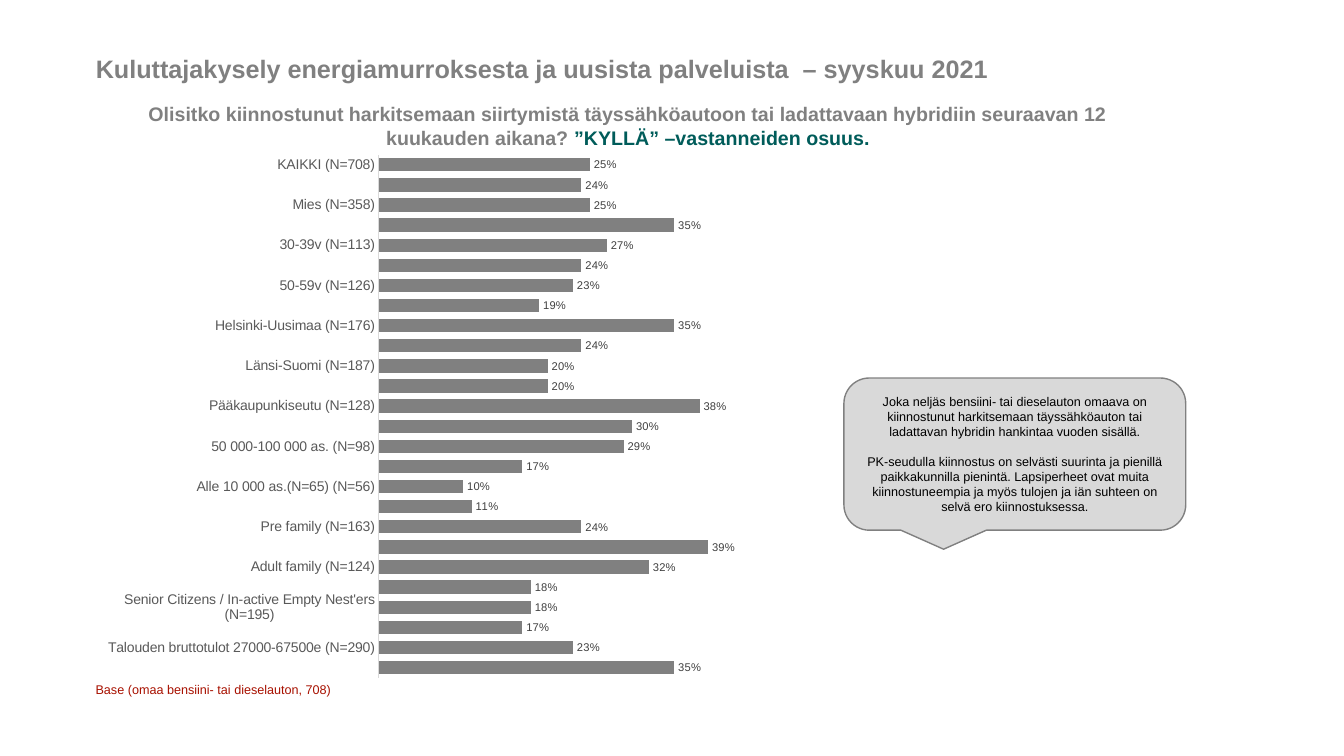
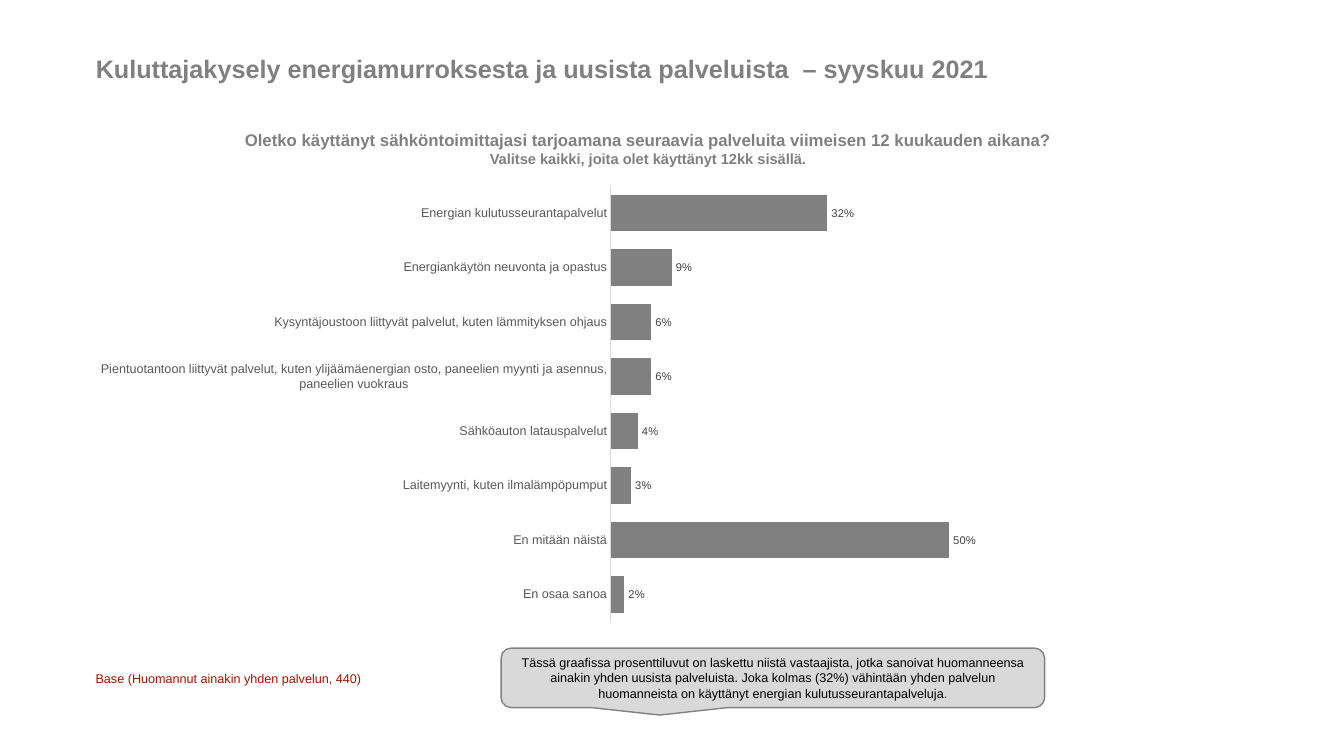
from dataclasses import dataclass

from lxml.etree import SubElement
from pptx import Presentation
from pptx.chart.data import CategoryChartData
from pptx.dml.color import RGBColor
from pptx.enum.chart import XL_CHART_TYPE, XL_LABEL_POSITION, XL_TICK_MARK
from pptx.enum.shapes import MSO_SHAPE
from pptx.enum.text import MSO_ANCHOR, MSO_AUTO_SIZE, PP_ALIGN
from pptx.oxml.ns import qn
from pptx.slide import Slide
from pptx.text.text import Font, TextFrame
from pptx.util import Inches, Pt

FONT = "Arial"
GRAY = "808080"
PALE = "D9D9D9"
TEAL = "005C5A"
RED = "A81100"
LABEL = "595959"
VALUE = "404040"
BLACK = "000000"
TITLE = "Kuluttajakysely energiamurroksesta ja uusista palveluista  – syyskuu 2021"


@dataclass(frozen=True)
class Box:
    left: float
    top: float
    width: float
    height: float

    def place(self) -> tuple[Inches, Inches, Inches, Inches]:
        return (Inches(self.left), Inches(self.top),
                Inches(self.width), Inches(self.height))


@dataclass(frozen=True)
class Run:
    text: str
    size: float
    color: str
    bold: bool = False


@dataclass(frozen=True)
class Note:
    """Text block: one tuple of runs for each paragraph."""
    box: Box
    paras: tuple[tuple[Run, ...], ...]
    align: PP_ALIGN = PP_ALIGN.CENTER
    anchor: MSO_ANCHOR = MSO_ANCHOR.MIDDLE
    inset: float = 0.1
    gap: float = 0


@dataclass(frozen=True)
class Bars:
    """Bar chart; plot gives the inner plot area as shares of the box."""
    box: Box
    plot: Box
    size: float
    rows: tuple[tuple[str, float], ...]


@dataclass(frozen=True)
class Page:
    query: Note
    base: Note
    bars: Bars
    callout: Note


def rgb(code: str) -> RGBColor:
    return RGBColor.from_string(code)


def style(font: Font, size: float, color: str, bold: bool = False) -> None:
    font.name = FONT
    font.size = Pt(size)
    font.bold = bold
    font.color.rgb = rgb(color)


def write(frame: TextFrame, note: Note) -> None:
    frame.word_wrap = True
    frame.auto_size = MSO_AUTO_SIZE.NONE
    frame.vertical_anchor = note.anchor
    frame.margin_left = frame.margin_right = Inches(note.inset)
    frame.margin_top = frame.margin_bottom = Inches(0.05)
    for i, runs in enumerate(note.paras):
        para = frame.add_paragraph() if i else frame.paragraphs[0]
        para.alignment = note.align
        if i and note.gap:
            para.space_before = Pt(note.gap)
        for part in runs:
            run = para.add_run()
            run.text = part.text
            style(run.font, part.size, part.color, part.bold)


def add_title(slide: Slide, note: Note) -> None:
    title = slide.shapes.title
    title.left, title.top, title.width, title.height = note.box.place()
    write(title.text_frame, note)


def add_text(slide: Slide, note: Note) -> None:
    write(slide.shapes.add_textbox(*note.box.place()).text_frame, note)


def add_callout(slide: Slide, note: Note) -> None:
    shape = slide.shapes.add_shape(
        MSO_SHAPE.ROUNDED_RECTANGULAR_CALLOUT, *note.box.place())
    shape.shadow.inherit = False
    shape.fill.solid()
    shape.fill.fore_color.rgb = rgb(PALE)
    shape.line.color.rgb = rgb(GRAY)
    shape.line.width = Pt(1)
    write(shape.text_frame, note)


def set_plot(chart, plot: Box) -> None:
    """Fix the inner plot area, which python-pptx leaves automatic."""
    area = chart.plots[0]._element.getparent()
    for old in area.findall(qn("c:layout")):
        area.remove(old)
    layout = SubElement(area, qn("c:layout"))
    area.insert(0, layout)
    manual = SubElement(layout, qn("c:manualLayout"))
    for tag, val in (("layoutTarget", "inner"), ("xMode", "edge"),
                     ("yMode", "edge"), ("x", plot.left), ("y", plot.top),
                     ("w", plot.width), ("h", plot.height)):
        SubElement(manual, qn(f"c:{tag}")).set("val", str(val))


def add_bars(slide: Slide, bars: Bars) -> None:
    data = CategoryChartData(number_format="0%")
    data.categories = [name for name, _ in bars.rows]
    data.add_series("Series 1", [share / 100 for _, share in bars.rows])
    chart = slide.shapes.add_chart(
        XL_CHART_TYPE.BAR_CLUSTERED, *bars.box.place(), data).chart
    chart.has_title = False
    chart.has_legend = False
    style(chart.font, 10, BLACK)

    cat = chart.category_axis
    cat.reverse_order = True
    cat.major_tick_mark = cat.minor_tick_mark = XL_TICK_MARK.NONE
    cat.format.line.color.rgb = rgb(PALE)
    cat.format.line.width = Pt(0.75)
    style(cat.tick_labels.font, bars.size, LABEL)

    val = chart.value_axis
    val.minimum_scale, val.maximum_scale = 0, 1
    val.major_unit = 0.2
    val.has_major_gridlines = False
    val.visible = False

    plot = chart.plots[0]
    plot.gap_width = 50
    plot.vary_by_categories = False
    fill = plot.series[0].format.fill
    fill.solid()
    fill.fore_color.rgb = rgb(GRAY)
    plot.has_data_labels = True
    labels = plot.data_labels
    labels.show_value = True
    labels.number_format = "0%"
    labels.number_format_is_linked = False
    labels.position = XL_LABEL_POSITION.OUTSIDE_END
    style(labels.font, 8, VALUE)
    set_plot(chart, bars.plot)


def base(top: float, text: str) -> Note:
    return Note(Box(0.85, top, 11.63, 0.28), ((Run(text, 9, RED),),),
                PP_ALIGN.LEFT, MSO_ANCHOR.TOP)


def callout(box: Box, *texts: str) -> Note:
    return Note(box, tuple((Run(text, 9, BLACK),) for text in texts), gap=10.5)


HEAD = Note(Box(0.85, 0.48, 11.63, 0.4), ((Run(TITLE, 18, GRAY, True),),),
            PP_ALIGN.LEFT)

PAGES = (
    Page(
        Note(Box(0.85, 0.96, 10.76, 0.57), ((
            Run("Olisitko kiinnostunut harkitsemaan siirtymistä täyssähköautoon "
                "tai ladattavaan hybridiin seuraavan 12 kuukauden aikana? ",
                14, GRAY, True),
            Run("”KYLLÄ” –vastanneiden osuus.", 14, TEAL, True)),), inset=0.2),
        base(6.72, "Base (omaa bensiini- tai dieselauton, 708)"),
        Bars(Box(0.85, 1.48, 11.63, 5.52), Box(0.25, 0.01, 0.72, 0.94), 10, (
            ("KAIKKI (N=708)", 25),
            ("Nainen (N=351)", 24),
            ("Mies (N=358)", 25),
            ("18-29v (N=121)", 35),
            ("30-39v (N=113)", 27),
            ("40-49v (N=101)", 24),
            ("50-59v (N=126)", 23),
            ("60v+ (N=247)", 19),
            ("Helsinki-Uusimaa (N=176)", 35),
            ("Etelä-Suomi (N=164)", 24),
            ("Länsi-Suomi (N=187)", 20),
            ("Pohjois- ja Itä-Suomi (N=182)", 20),
            ("Pääkaupunkiseutu (N=128)", 38),
            ("Yli 100 000 as. pks ulkopuolella (N=179)", 30),
            ("50 000-100 000 as. (N=98)", 29),
            ("10 000-49 999 as. (N=177)", 17),
            ("Alle 10 000 as.(N=65) (N=56)", 10),
            ("Maaseutu (N=72)", 11),
            ("Pre family (N=163)", 24),
            ("Young family (N=96)", 39),
            ("Adult family (N=124)", 32),
            ("Active Empty Nest'ers (N=131)", 18),
            ("Senior Citizens / In-active Empty Nest'ers (N=195)", 18),
            ("Talouden bruttotulot alle 27000e (N=144)", 17),
            ("Talouden bruttotulot 27000-67500e (N=290)", 23),
            ("Talouden bruttotulot 67500e+ (N=164)", 35))),
        callout(
            Box(8.37, 3.75, 3.39, 1.51),
            "Joka neljäs bensiini- tai dieselauton omaava on kiinnostunut "
            "harkitsemaan täyssähköauton tai ladattavan hybridin hankintaa "
            "vuoden sisällä.",
            "PK-seudulla kiinnostus on selvästi suurinta ja pienillä "
            "paikkakunnilla pienintä. Lapsiperheet ovat muita "
            "kiinnostuneempia ja myös tulojen ja iän suhteen on selvä ero "
            "kiinnostuksessa.")),
    Page(
        Note(Box(0.85, 1.23, 11.16, 0.48), (
            (Run("Oletko käyttänyt sähköntoimittajasi tarjoamana seuraavia "
                 "palveluita viimeisen 12 kuukauden aikana?", 12, GRAY, True),),
            (Run("Valitse kaikki, joita olet käyttänyt 12kk sisällä.",
                 10.5, GRAY, True),))),
        base(6.61, "Base (Huomannut ainakin yhden palvelun, 440)"),
        Bars(Box(1, 1.8, 12.01, 4.46), Box(0.42, 0.01, 0.56, 0.97), 9, (
            ("Energian kulutusseurantapalvelut", 32),
            ("Energiankäytön neuvonta ja opastus", 9),
            ("Kysyntäjoustoon liittyvät palvelut, kuten lämmityksen ohjaus", 6),
            ("Pientuotantoon liittyvät palvelut, kuten ylijäämäenergian osto, "
             "paneelien myynti ja asennus, paneelien vuokraus", 6),
            ("Sähköauton latauspalvelut", 4),
            ("Laitemyynti, kuten ilmalämpöpumput", 3),
            ("En mitään näistä", 50),
            ("En osaa sanoa", 2))),
        callout(
            Box(4.97, 6.43, 5.39, 0.59),
            "Tässä graafissa prosenttiluvut on laskettu niistä vastaajista, "
            "jotka sanoivat huomanneensa ainakin yhden uusista palveluista. "
            "Joka kolmas (32%) vähintään yhden palvelun huomanneista on "
            "käyttänyt energian kulutusseurantapalveluja.")),
)


def main() -> None:
    deck = Presentation()
    deck.slide_width, deck.slide_height = Inches(13.33), Inches(7.5)
    for page in PAGES:
        slide = deck.slides.add_slide(deck.slide_layouts[5])
        add_title(slide, HEAD)
        add_text(slide, page.query)
        add_text(slide, page.base)
        add_bars(slide, page.bars)
        add_callout(slide, page.callout)
    deck.save("out.pptx")


if __name__ == "__main__":
    main()
